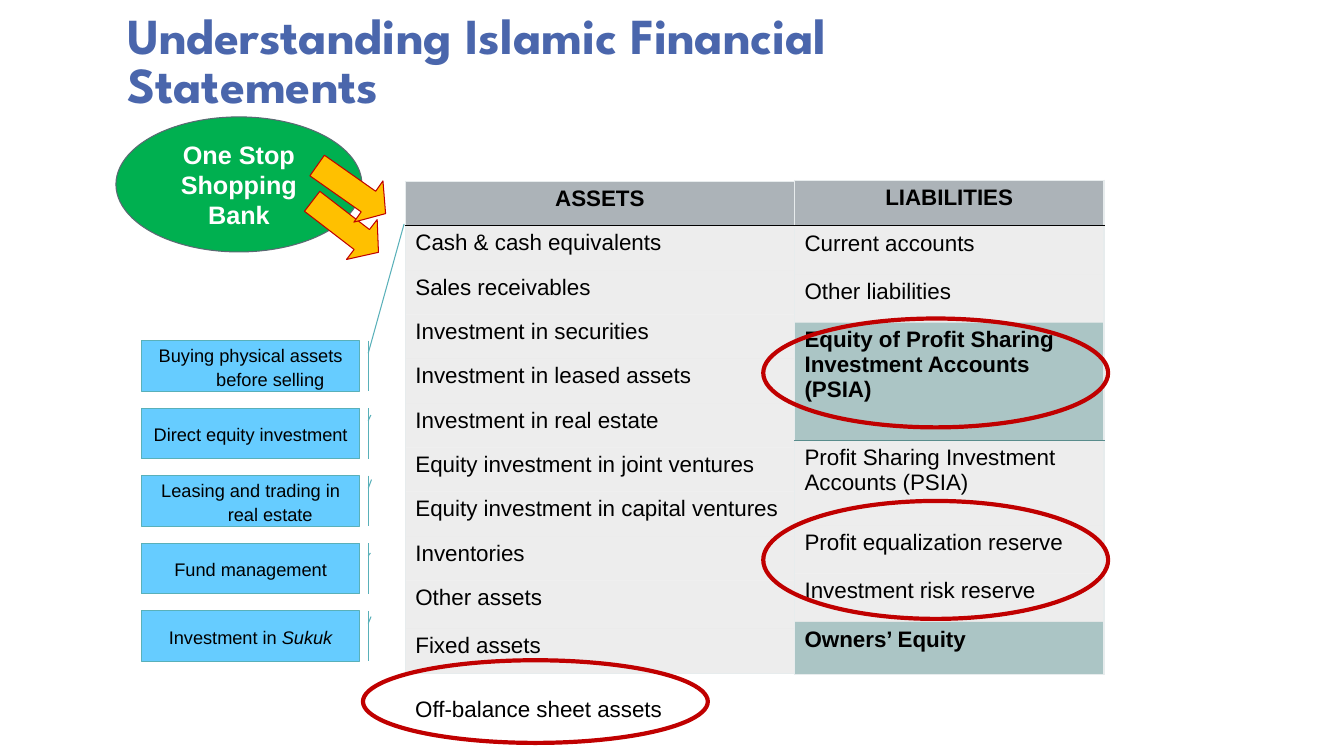
from pptx import Presentation
from pptx.dml.color import RGBColor
from pptx.enum.shapes import MSO_SHAPE
from pptx.enum.text import MSO_ANCHOR, PP_ALIGN
from pptx.oxml import parse_xml
from pptx.oxml.ns import nsdecls
from pptx.util import Inches, Pt

OVAL, ARROW = MSO_SHAPE.OVAL, MSO_SHAPE.LEFT_ARROW
CALLOUT = MSO_SHAPE.LINE_CALLOUT_1_BORDER_AND_ACCENT_BAR
LEFT, CENTER = PP_ALIGN.LEFT, PP_ALIGN.CENTER
MIDDLE, BOTTOM = MSO_ANCHOR.MIDDLE, MSO_ANCHOR.BOTTOM
NO_GRID_STYLE = "{2D5ABB26-0587-4C30-8999-92F81FD0307C}"
GRAY, SLATE, TEAL, EDGE, BLACK = "DDDDDD", "5B6973", "598C8C", "E7ECED", "000000"


def write(p, text, size, color=BLACK, **style):
    r = p.add_run()
    r.text = text
    r.font.color.rgb = RGBColor.from_string(color)
    for name, value in {"name": "Arial", "size": Pt(size), **style}.items():
        setattr(r.font, name, value)


def add_shape(kind, box, fill, line, width):
    sp = s.shapes.add_shape(kind, *[Inches(v) for v in box])
    sp.shadow.inherit = False
    if fill:
        sp.fill.solid()
        sp.fill.fore_color.rgb = RGBColor.from_string(fill)
    else:
        sp.fill.background()
    sp.line.color.rgb = RGBColor.from_string(line)
    sp.line.width = Pt(width)
    return sp


prs = Presentation()
prs.slide_width, prs.slide_height = Inches(13.33), Inches(7.5)
s = prs.slides.add_slide(prs.slide_layouts[5])

# Title
title = s.shapes.title
title.left, title.top = Inches(1.16), Inches(0)
title.width, title.height = Inches(9.5), Inches(1.17)
tf = title.text_frame
tf.vertical_anchor = BOTTOM
p = tf.paragraphs[0]
p.alignment, p.line_spacing = LEFT, 0.8
write(p, "Understanding Islamic Financial Statements", 36, "4A66AC",
      name="League Spartan", bold=True)

# Balance sheet: (left, top, width), then rows of (text, height)
assets = [("ASSETS", 0.44), ("Cash & cash equivalents", 0.44), ("Sales receivables", 0.44),
          ("Investment in securities", 0.44), ("Investment in leased assets", 0.44),
          ("Investment in real estate", 0.44), ("Equity investment in joint ventures", 0.44),
          ("Equity investment in capital ventures", 0.44), ("Inventories", 0.44),
          ("Other assets", 0.48), ("Fixed assets", 0.44)]
liabilities = [("LIABILITIES", 0.45), ("Current accounts", 0.48), ("Other liabilities", 0.48),
               ("Equity of Profit Sharing Investment Accounts (PSIA)", 1.17),
               ("Profit Sharing Investment Accounts (PSIA)", 0.84),
               ("Profit equalization reserve", 0.48), ("Investment risk reserve", 0.48),
               ("Owners’ Equity", 0.52)]
equity_rows = ("Equity of Profit Sharing Investment Accounts (PSIA)", "Owners’ Equity")

for (left, top, width), rows in [((4.02, 1.8, 3.86), assets),
                                 ((7.88, 1.79, 3.07), liabilities)]:
    height = sum(h for _, h in rows)
    tbl = s.shapes.add_table(len(rows), 1, Inches(left), Inches(top),
                             Inches(width), Inches(height)).table
    tbl.first_row = tbl.horz_banding = False
    tbl._tbl.tblPr[0].text = NO_GRID_STYLE
    # Rules below the header, below the equity row and around the table
    rules = {0: EDGE, 1: BLACK, len(rows): EDGE}
    if rows is liabilities:
        rules[4] = TEAL
    for i, (text, row_height) in enumerate(rows):
        tbl.rows[i].height = Inches(row_height)
        cell = tbl.cell(i, 0)
        header, equity = i == 0, text in equity_rows
        p = cell.text_frame.paragraphs[0]
        p.alignment = CENTER if header else LEFT
        write(p, text, 16, bold=header or equity)
        cell.fill.solid()
        cell.fill.fore_color.rgb = RGBColor.from_string(
            SLATE if header else TEAL if equity else GRAY)
        tcPr = cell._tc.get_or_add_tcPr()
        tcPr.xpath(".//a:srgbClr")[0].append(
            parse_xml(f'<a:alpha {nsdecls("a")} val="50000"/>'))
        sides = {"L": EDGE, "R": EDGE, "T": rules.get(i), "B": rules.get(i + 1)}
        for n, (side, color) in enumerate(sides.items()):
            paint = (f'<a:solidFill><a:srgbClr val="{color}"/></a:solidFill>'
                     if color else "<a:noFill/>")
            tcPr.insert(n, parse_xml(
                f'<a:ln{side} {nsdecls("a")} w="12700">{paint}</a:ln{side}>'))

# Bank oval
bank = add_shape(OVAL, (1.15, 1.16, 2.44, 1.34), "00B050", SLATE, 0.75)
tf = bank.text_frame
tf.word_wrap, tf.vertical_anchor = False, MIDDLE
for i, line in enumerate(["One Stop", "Shopping", "Bank"]):
    p = tf.add_paragraph() if i else tf.paragraphs[0]
    p.alignment = CENTER
    write(p, line, 18, "FFFFFF", bold=True)

# Arrows from the bank to the assets
for left, top, angle in [(3.01, 2, 217.6), (3.07, 1.63, 215.1)]:
    arrow = add_shape(ARROW, (left, top, 0.83, 0.5), "FFC000", "C00000", 0.75)
    arrow.rotation = angle
    arrow.adjustments[0], arrow.adjustments[1] = 0.5, 0.417

# Activity callouts: text runs, leader end (y, x)
callouts = [(["Buying physical assets before selling"], -2.316, 1.202),
            (["Direct equity investment"], 0.135, 1.05),
            (["Leasing and trading in real estate"], 0.076, 1.053),
            (["Fund management"], 0.194, 1.048),
            (["Investment in ", "Sukuk"], 0.115, 1.051)]
hanging = []
for i, (runs, end_y, end_x) in enumerate(callouts):
    sp = add_shape(CALLOUT, (1.4, 3.38 + 0.67 * i, 2.17, 0.5), "66CCFF", "59B0B9", 0.75)
    for n, value in enumerate([0.25, 1.038, end_y, end_x]):
        sp.adjustments[n] = value
    tf = sp.text_frame
    tf.word_wrap, tf.vertical_anchor = True, MIDDLE
    p = tf.paragraphs[0]
    p.alignment = CENTER
    hanging.append(p)
    for text in runs:
        write(p, text, 13, italic=text == "Sukuk")

# Off-balance sheet note
note = s.shapes.add_textbox(Inches(4.02), Inches(6.82), Inches(3.67), Inches(0.39))
note.text_frame.word_wrap = True
p = note.text_frame.paragraphs[0]
hanging.append(p)
write(p, "Off-balance sheet assets", 16)

# Hanging indent shared by the callouts and the note
for p in hanging:
    p.line_spacing = 1.1
    pPr = p._p.get_or_add_pPr()
    pPr.set("marL", str(Inches(0.39)))
    pPr.set("indent", str(Inches(-0.39)))

# Red highlight rings
for left, top, height in [(7.57, 3.16, 1.08), (7.57, 4.97, 1.17), (3.6, 6.55, 0.82)]:
    add_shape(OVAL, (left, top, 3.42, height), None, "C00000", 3)

prs.save("out.pptx")
